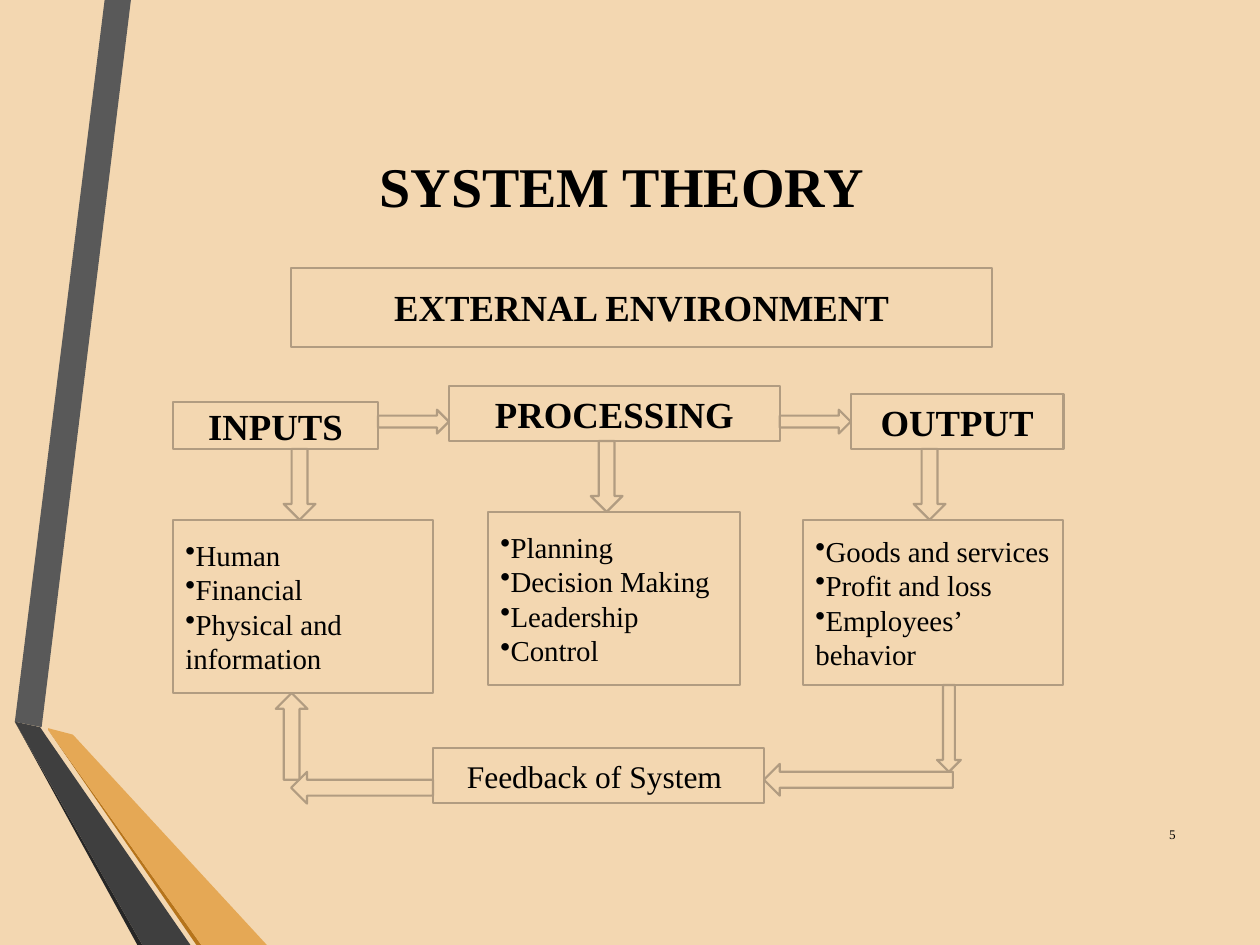
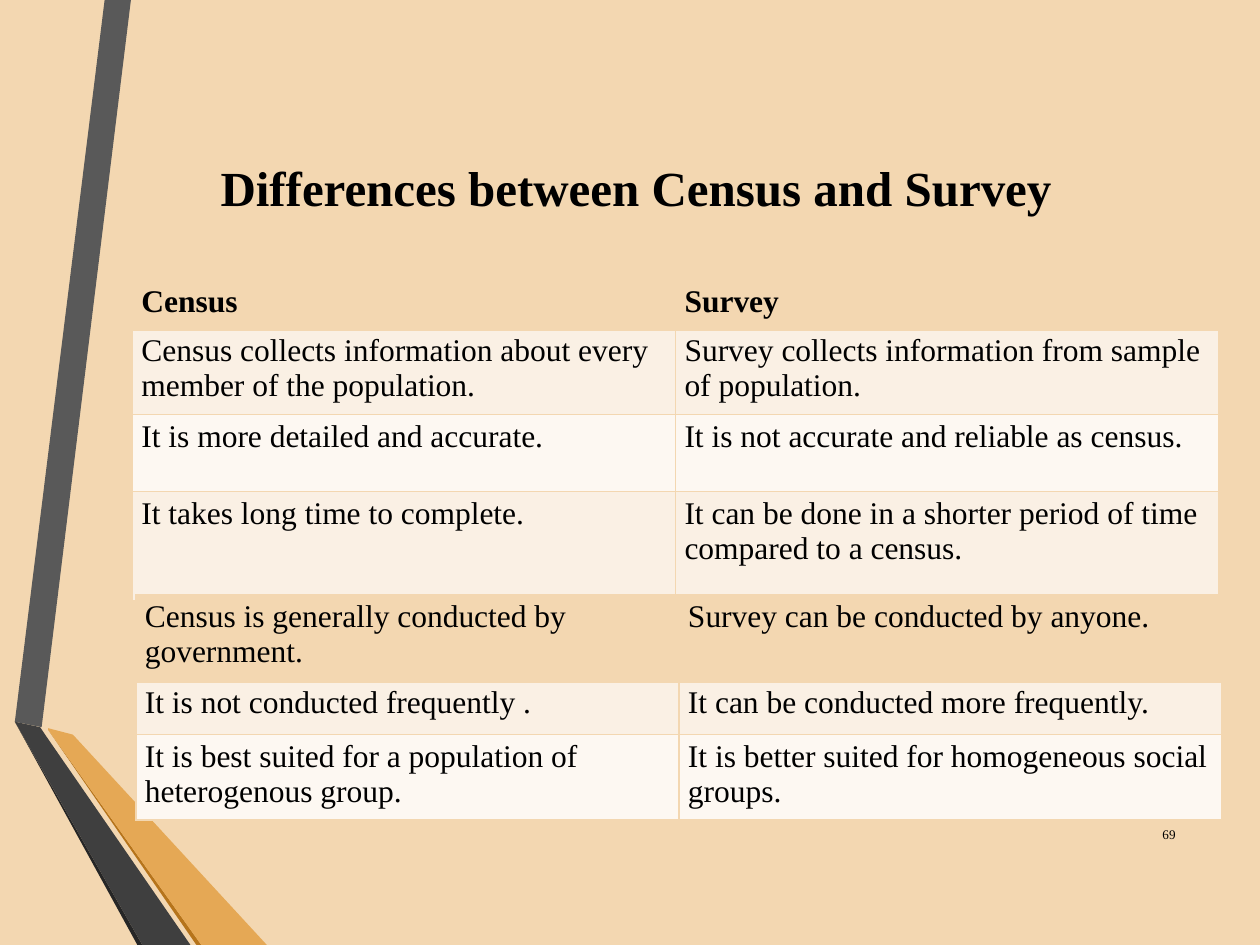
from lxml.etree import SubElement
from pptx import Presentation
from pptx.dml.color import RGBColor
from pptx.enum.shapes import MSO_SHAPE
from pptx.enum.text import MSO_ANCHOR, PP_ALIGN
from pptx.oxml.ns import qn
from pptx.util import Cm, Pt

COLORS = {
    "sand": "F3D7B1",
    "outline": "B19C81",
    "text": "000000",
    "band_dark": "FAF0E4",
    "band_light": "FDF8F2",
    "grey": "595959",
    "charcoal": "3F3F3F",
    "shadow": "262626",
    "amber": "E5A855",
    "bronze": "B6741B",
}
FONT = "Times New Roman"
RIBBONS = [
    ("grey", [(2.64, 0), (2.11, 0), (0.3, 14.55), (0.84, 14.66)]),
    ("shadow", [(0.3, 14.55), (2.77, 19.05), (2.87, 19.05)]),
    ("bronze", [(0.97, 14.71), (3.96, 19.05), (4.06, 19.05)]),
    ("amber", [(0.97, 14.71), (4.06, 19.05), (5.38, 19.05), (1.47, 14.81), (0.97, 14.68)]),
    ("charcoal", [(3.84, 19.05), (0.91, 14.81), (0.81, 14.66), (0.3, 14.55), (2.87, 19.05)]),
]


def color(name):
    """Return the palette colour with the given name."""
    return RGBColor.from_string(COLORS[name])


def add_span(para, text, size, bold=False):
    """Add one formatted run to a paragraph."""
    span = para.add_run()
    span.text = text
    span.font.name = FONT
    span.font.size = Pt(size)
    span.font.bold = bold
    span.font.color.rgb = color("text")


def write_line(box, text, size, bold=False, align=PP_ALIGN.CENTER):
    """Write a single vertically centred line in a shape."""
    frame = box.text_frame
    frame.word_wrap = True
    frame.vertical_anchor = MSO_ANCHOR.MIDDLE
    para = frame.paragraphs[0]
    para.alignment = align
    add_span(para, text, size, bold)


def add_text(page, area, text, size, bold=False, align=PP_ALIGN.CENTER):
    """Add a text box with one line."""
    box = page.shapes.add_textbox(*map(Cm, area))
    write_line(box, text, size, bold, align)


def add_outlined(page, kind, area):
    """Add a sand-coloured shape with a thin outline."""
    shape = page.shapes.add_shape(kind, *map(Cm, area))
    shape.shadow.inherit = False
    shape.fill.solid()
    shape.fill.fore_color.rgb = color("sand")
    shape.line.color.rgb = color("outline")
    shape.line.width = Pt(1.25)
    return shape


def add_label(page, area, text, size=21, bold=True):
    """Add an outlined rectangle with a centred label."""
    write_line(add_outlined(page, MSO_SHAPE.RECTANGLE, area), text, size, bold)


def add_list(page, area, items):
    """Add an outlined rectangle with a bulleted list."""
    frame = add_outlined(page, MSO_SHAPE.RECTANGLE, area).text_frame
    frame.word_wrap = True
    frame.vertical_anchor = MSO_ANCHOR.MIDDLE
    for index, item in enumerate(items):
        para = frame.add_paragraph() if index else frame.paragraphs[0]
        para.alignment = PP_ALIGN.LEFT
        props = para._p.get_or_add_pPr()
        props.set("marL", "0")
        props.set("indent", str(-Cm(0.28)))
        SubElement(props, qn("a:buChar"), char="•")
        add_span(para, item, 16.5)


def add_frame(deck, title, title_area, title_size, number):
    """Add a page with the side ribbons, title and page number."""
    page = deck.slides.add_slide(deck.slide_layouts[6])
    page.background.fill.solid()
    page.background.fill.fore_color.rgb = color("sand")
    for name, corners in RIBBONS:
        points = [(Cm(x), Cm(y)) for x, y in corners]
        builder = page.shapes.build_freeform(*points[0])
        builder.add_line_segments(points[1:], close=True)
        ribbon = builder.convert_to_shape()
        ribbon.shadow.inherit = False
        ribbon.fill.solid()
        ribbon.fill.fore_color.rgb = color(name)
        ribbon.line.fill.background()
    add_text(page, title_area, title, title_size, bold=True)
    add_text(page, (22.81, 16.31, 1.14, 1.02), str(number), 7.5, align=PP_ALIGN.RIGHT)
    return page


def add_stages(page, left, top):
    """Add the three stages with their lists and joining arrows."""
    stages = [
        ("INPUTS", (0, 0.32, 4.13, 0.95), (0, 2.7, 5.24, 3.49), 2.23,
         ["Human", "Financial", "Physical and information"]),
        ("PROCESSING", (5.56, 0, 6.67, 1.11), (6.35, 2.54, 5.08, 3.49), 8.42,
         ["Planning", "Decision Making", "Leadership", "Control"]),
        ("OUTPUT", (13.66, 0.16, 4.29, 1.11), (12.7, 2.7, 5.24, 3.33), 14.93,
         ["Goods and services", "Profit and loss", "Employees’ behavior"]),
    ]
    previous_end = None
    for name, (x, y, width, height), (list_x, list_y, *size), arrow_x, items in stages:
        add_label(page, (left + x, top + y, width, height), name)
        add_list(page, (left + list_x, top + list_y, *size), items)
        bottom = y + height
        add_outlined(page, MSO_SHAPE.DOWN_ARROW,
                     (left + arrow_x, top + bottom, 0.64, list_y - bottom))
        if previous_end is not None:
            add_outlined(page, MSO_SHAPE.RIGHT_ARROW,
                         (left + previous_end, top + 0.48, x - previous_end, 0.48))
        previous_end = x + width


def add_feedback(page, left, top):
    """Add the feedback loop from output back to inputs."""
    add_label(page, (left + 5.24, top + 1.27, 6.67, 1.11), "Feedback of System ", 18, False)
    arrows = [
        (MSO_SHAPE.DOWN_ARROW, 15.4, 0, 0.48, 1.75),
        (MSO_SHAPE.LEFT_ARROW, 11.91, 1.59, 3.81, 0.64),
        (MSO_SHAPE.LEFT_ARROW, 2.38, 1.75, 2.86, 0.64),
        (MSO_SHAPE.UP_ARROW, 2.07, 0.16, 0.64, 1.75),
    ]
    for kind, x, y, width, height in arrows:
        add_outlined(page, kind, (left + x, top + y, width, height))


def add_border(cell, side, width):
    """Draw one border of a table cell in the page colour."""
    line = SubElement(cell._tc.get_or_add_tcPr(), qn(f"a:ln{side}"), w=str(Pt(width)))
    fill = SubElement(line, qn("a:solidFill"))
    SubElement(fill, qn("a:srgbClr"), val=COLORS["sand"])


def add_comparison(page, left, top, heights, rows, header=False):
    """Add a two-column banded table whose first row matches the page."""
    column_width = 10.95
    table = page.shapes.add_table(len(rows), 2, Cm(left), Cm(top),
                                  Cm(2 * column_width), Cm(sum(heights))).table
    table.first_row = table.horz_banding = False
    for column in table.columns:
        column.width = Cm(column_width)
    for row, (height, texts) in enumerate(zip(heights, rows)):
        table.rows[row].height = Cm(height)
        band = "sand" if row == 0 else ("band_light", "band_dark")[row % 2]
        for column, text in enumerate(texts):
            cell = table.cell(row, column)
            cell.margin_left = cell.margin_right = Cm(0.18)
            cell.margin_top = cell.margin_bottom = Cm(0.1)
            add_border(cell, "L", 1)
            add_border(cell, "R", 1)
            add_border(cell, "T", 3 if row == 1 else 1)
            add_border(cell, "B", 3 if row == 0 else 1)
            cell.fill.solid()
            cell.fill.fore_color.rgb = color(band)
            add_span(cell.text_frame.paragraphs[0], text, 18, header and row == 0)


def build_system_theory(deck):
    """Build the system theory page."""
    page = add_frame(deck, "SYSTEM THEORY", (3.96, 2.7, 17.15, 2.06), 32, 5)
    add_label(page, (5.87, 5.4, 14.13, 1.59), "EXTERNAL ENVIRONMENT")
    add_stages(page, 3.49, 7.78)
    add_feedback(page, 3.49, 13.81)


def build_census_survey(deck):
    """Build the census and survey comparison page."""
    page = add_frame(deck, "Differences between Census and Survey",
                     (2.7, 2.95, 20.24, 1.65), 28, 69)
    add_comparison(page, 2.67, 5.64, [0.99, 1.73, 1.55, 2.21], [
        ("Census", "Survey"),
        ("Census collects information about every member of the population.",
         "Survey collects information from sample of population."),
        ("It is more detailed and accurate.", "It is not accurate and reliable as census."),
        ("It takes long time to complete.",
         "It can be done in a shorter period of time compared to a census."),
    ], header=True)
    add_comparison(page, 2.74, 11.99, [1.19, 1.09, 1.57], [
        ("Census is generally conducted by government.", "Survey can be conducted by anyone."),
        ("It is not conducted frequently .", "It can be conducted more frequently."),
        ("It is best suited for a population of heterogenous group.",
         "It is better suited for homogeneous social groups."),
    ])


def main():
    """Build and save the deck."""
    deck = Presentation()
    deck.slide_width, deck.slide_height = Cm(25.4), Cm(19.05)
    build_system_theory(deck)
    build_census_survey(deck)
    deck.save("out.pptx")


if __name__ == "__main__":
    main()
